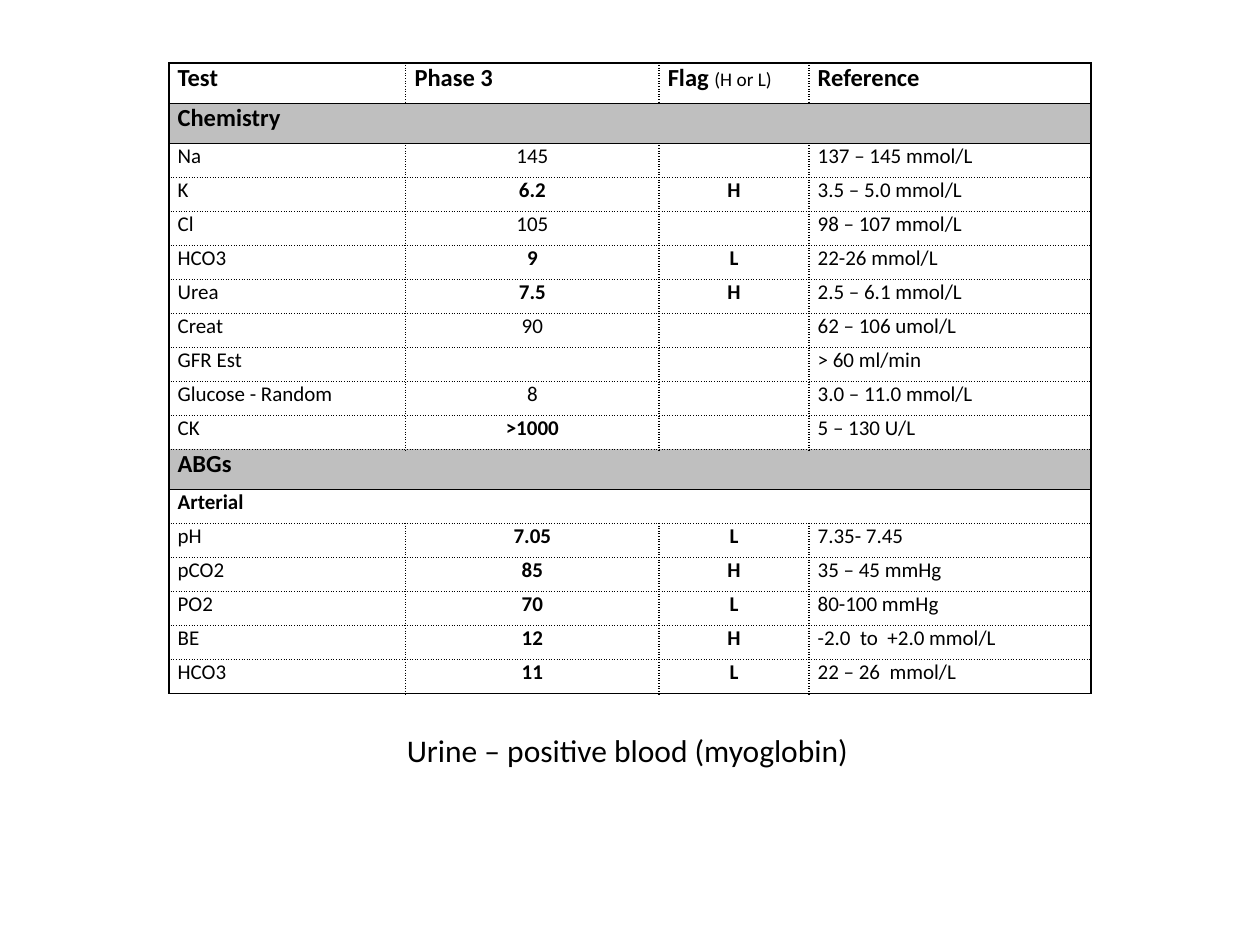
import pptx
import pptx.util
import pptx.dml.color
import pptx.enum.text
import pptx.oxml
from pptx.util import Inches


def color(value):
    return pptx.dml.color.RGBColor.from_string(value)


def add_border(cell, side, dash):
    line = pptx.oxml.parse_xml(
        f'<a:ln{side} xmlns:a="http://schemas.openxmlformats.org/drawingml/2006/main" w="12700">'
        '<a:solidFill><a:srgbClr val="000000"/></a:solidFill>'
        f'<a:prstDash val="{dash}"/></a:ln{side}>')
    cell._tc.get_or_add_tcPr().append(line)


rows = [
    ("Test", "Phase 3", "Flag ", "Reference"),
    ("Chemistry",),
    ("Na", "145", "", "137 – 145 mmol/L"),
    ("K", "6.2", "H", "3.5 – 5.0 mmol/L"),
    ("Cl", "105", "", "98 – 107 mmol/L"),
    ("HCO3", "9", "L", "22-26 mmol/L"),
    ("Urea", "7.5", "H", "2.5 – 6.1 mmol/L"),
    ("Creat", "90", "", "62 – 106 umol/L"),
    ("GFR Est", "", "", "> 60 ml/min"),
    ("Glucose - Random", "8", "", "3.0 – 11.0 mmol/L"),
    ("CK", ">1000", "", "5 – 130 U/L"),
    ("ABGs",),
    ("Arterial",),
    ("pH", "7.05", "L", "7.35- 7.45"),
    ("pCO2", "85", "H", "35 – 45 mmHg"),
    ("PO2", "70", "L", "80-100 mmHg"),
    ("BE", "12", "H", "-2.0  to  +2.0 mmol/L"),
    ("HCO3", "11", "L", "22 – 26  mmol/L"),
]
column_widths = [1.88, 2.01, 1.19, 2.24]
last_column = len(column_widths) - 1
section_rows = {1, 11}
heading_rows = {0} | section_rows
solid_rules = {0, 1, 2, 12, len(rows)}

deck = pptx.Presentation()
deck.slide_width = Inches(10)
deck.slide_height = Inches(7.5)
slide = deck.slides.add_slide(deck.slide_layouts[6])

table = slide.shapes.add_table(
    len(rows), len(column_widths), Inches(1.34), Inches(0.5), Inches(7.32), Inches(5.07)).table
table.first_row = False
table.horz_banding = False
for column, width in zip(table.columns, column_widths):
    column.width = Inches(width)

for row_index, values in enumerate(rows):
    is_heading = row_index in heading_rows
    is_merged = len(values) == 1
    table.rows[row_index].height = Inches(0.32 if is_heading else 0.27)
    if is_merged:
        table.cell(row_index, 0).merge(table.cell(row_index, last_column))
    for column_index in range(len(column_widths)):
        cell = table.cell(row_index, column_index)
        cell.margin_left = cell.margin_right = Inches(0.07)
        cell.margin_top = cell.margin_bottom = 0
        solid_sides = {
            "L": is_merged or column_index == 0,
            "R": is_merged or column_index == last_column,
            "T": row_index in solid_rules,
            "B": row_index + 1 in solid_rules,
        }
        for side, is_solid in solid_sides.items():
            add_border(cell, side, "solid" if is_solid else "sysDot")
        if is_heading:
            cell.fill.solid()
            cell.fill.fore_color.rgb = color("BFBFBF" if row_index in section_rows else "FFFFFF")
        else:
            cell.fill.background()

        para = cell.text_frame.paragraphs[0]
        para.font.name = "Calibri"
        para.font.size = pptx.util.Pt(14 if is_heading else 12)
        para.font.color.rgb = color("000000")
        is_result = not is_heading and column_index in (1, 2)
        if is_result:
            para.alignment = pptx.enum.text.PP_ALIGN.CENTER
        is_abnormal = is_result and (values[2:3] != ("",) or values[1] == ">1000")
        para.font.bold = is_heading or is_merged or is_abnormal
        if column_index < len(values) and values[column_index]:
            para.add_run().text = values[column_index]

flag_note = table.cell(0, 2).text_frame.paragraphs[0].add_run()
flag_note.text = "(H or L)"
flag_note.font.size = pptx.util.Pt(11)
flag_note.font.bold = False

box = slide.shapes.add_textbox(Inches(3.13), Inches(5.75), Inches(3.75), Inches(0.4))
box.text_frame.word_wrap = False
box.text_frame.auto_size = pptx.enum.text.MSO_AUTO_SIZE.SHAPE_TO_FIT_TEXT
para = box.text_frame.paragraphs[0]
para.text = "Urine – positive blood (myoglobin)"
para.font.name = "Calibri"
para.font.size = pptx.util.Pt(18)
para.font.color.rgb = color("000000")

deck.save("out.pptx")
